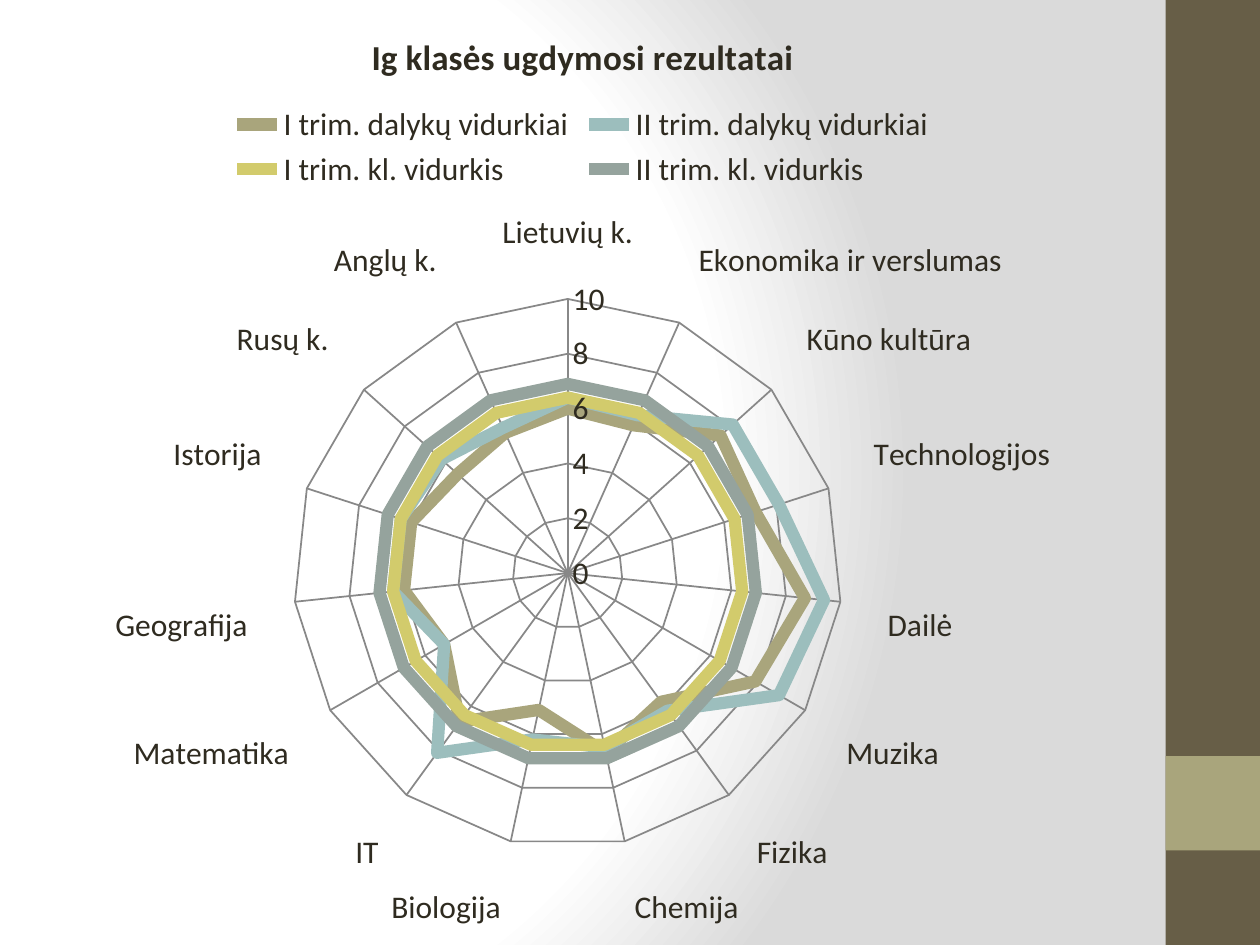
from lxml.etree import SubElement
from pptx import Presentation
from pptx.chart.data import CategoryChartData
from pptx.dml.color import RGBColor
from pptx.enum.chart import XL_CHART_TYPE, XL_LEGEND_POSITION, XL_TICK_MARK
from pptx.enum.shapes import MSO_SHAPE
from pptx.oxml.ns import qn
from pptx.util import Inches, Pt

WIDE, HIGH = Inches(10), Inches(7.5)
MAIN = 0.925
FACE = "Calibri"
COLORS = {
    "ink": "2F2B20", "grid": "888888", "bar": "675E47", "block": "A9A57C",
    "white": "FFFFFF", "shade": "DADADA",
    "first": "A9A57C", "second": "9CBEBD", "third": "D2CB6C", "fourth": "95A39D",
}
TOPICS = [
    "Lietuvių k.", "Anglų k.", "Rusų k.", "Istorija", "Geografija",
    "Matematika", "IT", "Biologija", "Chemija", "Fizika", "Muzika",
    "Dailė", "Technologijos", "Kūno kultūra", "Ekonomika ir verslumas",
]
SERIES = [
    ("I trim. dalykų vidurkiai", "first",
     [6, 5.6, 5.4, 6, 6, 5.2, 6.7, 5.1, 6.7, 5.8, 7.9, 8.7, 7.2, 7.5, 5.9]),
    ("II trim. dalykų vidurkiai", "second",
     [6.4, 5.8, 6.2, 6.4, 6.4, 5.2, 8.1, 6.2, 6.5, 6.2, 8.9, 9.4, 8.1, 8.1, 6.3]),
    ("I trim. kl. vidurkis", "third", [6.4] * len(TOPICS)),
    ("II trim. kl. vidurkis", "fourth", [6.9] * len(TOPICS)),
]


def color(name):
    return RGBColor.from_string(COLORS[name])


def style(font, size=18, bold=False, ink="ink"):
    font.name = FACE
    font.size = Pt(size)
    font.bold = bold
    font.color.rgb = color(ink)


def write(frame, text, **form):
    frame.text = text
    style(frame.paragraphs[0].runs[0].font, **form)


def stroke(line, name, width):
    line.color.rgb = color(name)
    line.width = Pt(width)


def shade(slide):
    fill = slide.background.fill
    fill.gradient()
    grad = slide.background._cSld.find(".//" + qn("a:gradFill"))
    for child in list(grad):
        grad.remove(child)
    stops = SubElement(grad, qn("a:gsLst"))
    for place, name in ((0, "white"), (75, "white"), (100, "shade")):
        stop = SubElement(stops, qn("a:gs"), pos=str(place * 1000))
        SubElement(stop, qn("a:srgbClr"), val=COLORS[name])
    ring = SubElement(grad, qn("a:path"), {"path": "circle"})
    SubElement(ring, qn("a:fillToRect"), l="20000", t="50000", r="100000", b="50000")


def block(slide, top, tall, name):
    left = int(WIDE * MAIN)
    shape = slide.shapes.add_shape(
        MSO_SHAPE.RECTANGLE, left, int(HIGH * top), WIDE - left, int(HIGH * tall))
    shape.shadow.inherit = False
    shape.fill.solid()
    shape.fill.fore_color.rgb = color(name)
    shape.line.fill.background()


def axis(item):
    item.major_tick_mark = item.minor_tick_mark = XL_TICK_MARK.NONE
    item.has_major_gridlines = True
    stroke(item.major_gridlines.format.line, "grid", 1)
    style(item.tick_labels.font)


def radar(slide):
    data = CategoryChartData(number_format="0.0")
    data.categories = TOPICS
    for name, _, values in SERIES:
        data.add_series(name, values)
    chart = slide.shapes.add_chart(
        XL_CHART_TYPE.RADAR, 0, 0, int(WIDE * MAIN), HIGH, data).chart
    style(chart.font, size=10)
    chart.has_title = True
    write(chart.chart_title.text_frame, "Ig klasės ugdymosi rezultatai", size=20, bold=True)
    chart.chart_title.include_in_layout = False
    chart.has_legend = True
    chart.legend.position = XL_LEGEND_POSITION.TOP
    chart.legend.include_in_layout = False
    style(chart.legend.font)
    for line, (_, name, _) in zip(chart.plots[0].series, SERIES):
        stroke(line.format.line, name, 7)
        line.smooth = False
    cats, scale = chart.category_axis, chart.value_axis
    axis(cats)
    axis(scale)
    cats.reverse_order = True
    cats.format.line.fill.background()
    stroke(scale.format.line, "grid", 1)
    scale.minimum_scale, scale.maximum_scale, scale.major_unit = 0, 10, 2
    scale.tick_labels.number_format = "#,##0"
    scale.tick_labels.number_format_is_linked = False


def main():
    deck = Presentation()
    deck.slide_width, deck.slide_height = WIDE, HIGH
    slide = deck.slides.add_slide(deck.slide_layouts[6])
    shade(slide)
    block(slide, 0, 1, "bar")
    block(slide, 0.8, 0.1, "block")
    radar(slide)
    deck.save("out.pptx")


if __name__ == "__main__":
    main()
